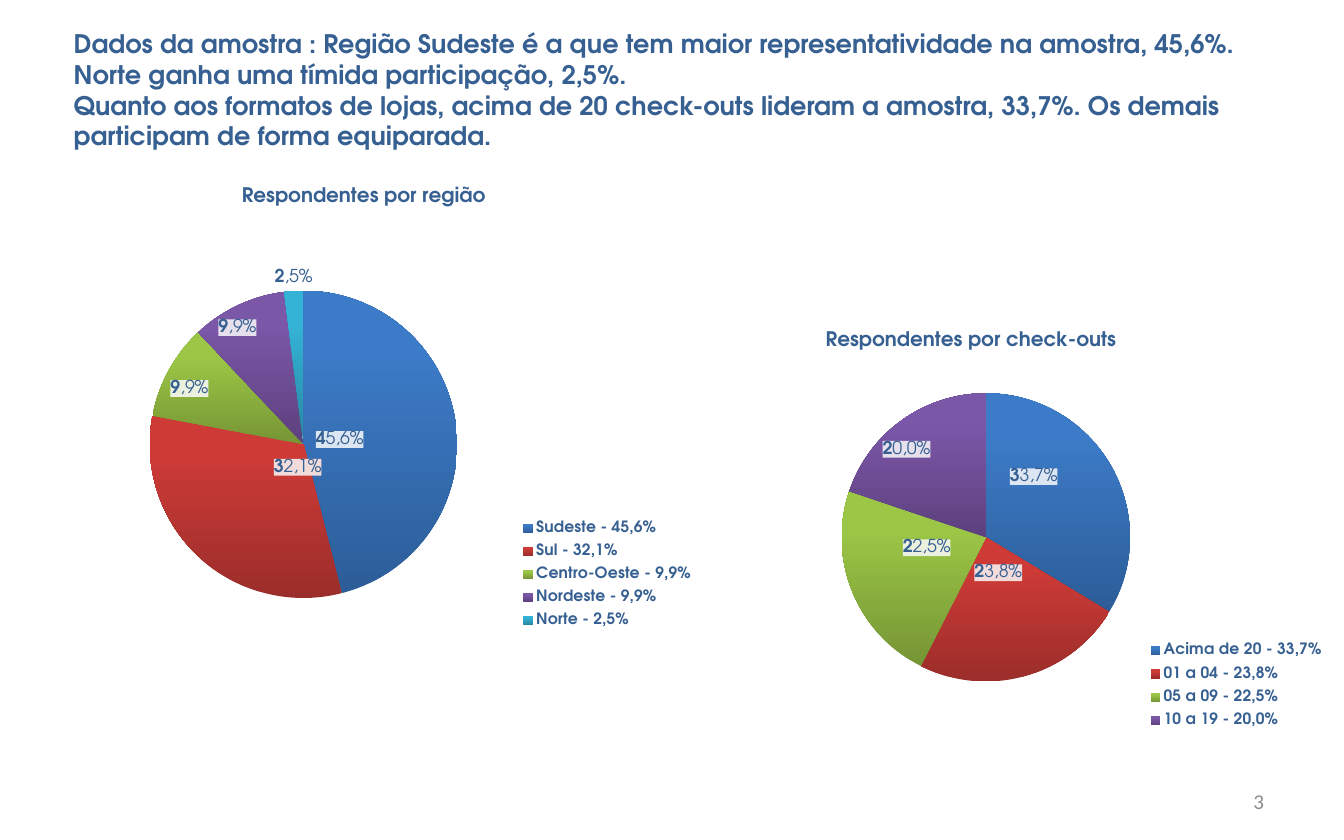
"""Builds the slide that presents the survey sample by region and by check-outs."""
from dataclasses import dataclass

from lxml.etree import SubElement
from pptx import Presentation
from pptx.chart.data import CategoryChartData
from pptx.dml.color import RGBColor
from pptx.enum.chart import XL_CHART_TYPE, XL_LABEL_POSITION, XL_LEGEND_POSITION
from pptx.enum.text import MSO_ANCHOR, PP_ALIGN
from pptx.oxml import parse_xml
from pptx.oxml.ns import nsdecls, qn
from pptx.util import Cm, Pt


@dataclass(frozen=True)
class Theme:
    """Colours, fonts and type sizes of the slide."""
    ink: str = "376092"
    muted: str = "8C8C8C"
    font: str = "TeX Gyre Adventor"
    number_font: str = "Calibri"
    heading_size: int = 23
    number_size: int = 19
    title_size: int = 18
    label_size: int = 16
    legend_size: int = 14
    slices: tuple = (("2C5D98", "3C7BC7"), ("9B2D2A", "CE3B37"), ("769535", "9CC746"),
                     ("5D417E", "7B57A8"), ("2787A0", "34B3D6"))
    label_backs: tuple = ("DCE6F2", "F2DCDB", "EBF1DE", "E6E0EC", "FFFFFF")


def style_font(font, size, color, name, bold=False):
    """Apply size, colour, typeface and weight to a font."""
    font.size, font.name, font.bold = Pt(size), name, bold
    font.color.rgb = RGBColor.from_string(color)


def write_text(frame, text, size, color, name, bold=False, align=PP_ALIGN.LEFT):
    """Write one formatted paragraph into a text frame."""
    para = frame.paragraphs[0]
    para.alignment = align
    para.text = text
    for span in para.runs:
        style_font(span.font, size, color, name, bold)


def manual_layout(**values):
    """Return a chart layout element with the given manual settings."""
    layout = parse_xml(f"<c:layout {nsdecls('c')}><c:manualLayout/></c:layout>")
    for tag, value in values.items():
        SubElement(layout[0], qn(f"c:{tag}")).set("val", str(value))
    return layout


def frame_layout(x, y, w, h, **target):
    """Return a layout that places a chart part by its edges."""
    return manual_layout(**target, xMode="edge", yMode="edge", x=x, y=y, w=w, h=h)


class SlideBuilder:
    """Holds the theme and the current page and draws its elements."""

    def __init__(self, page, theme):
        """Keep the page and the theme."""
        self.page, self.theme = page, theme

    def text(self, text, left, top, width, height, **style):
        """Add a wrapped text box anchored in the middle."""
        box = self.page.shapes.add_textbox(Cm(left), Cm(top), Cm(width), Cm(height))
        frame = box.text_frame
        frame.word_wrap = True
        frame.vertical_anchor = MSO_ANCHOR.MIDDLE
        frame.margin_left = frame.margin_right = Cm(0.41)
        frame.margin_top = frame.margin_bottom = Cm(0.2)
        write_text(frame, text, **style)

    def pie(self, title, rows, place, plot_area, legend_area):
        """Add a pie chart with a title, a legend and placed labels."""
        theme = self.theme
        data = CategoryChartData(number_format="0")
        data.categories = [f"{name} - {share}" for name, _, share, _ in rows]
        data.add_series("Respondentes", [value for _, value, _, _ in rows])
        chart = self.page.shapes.add_chart(
            XL_CHART_TYPE.PIE, *(Cm(length) for length in place), data).chart
        style_font(chart.font, theme.legend_size, theme.ink, theme.font)
        chart.has_title = True
        write_text(chart.chart_title.text_frame, title, theme.title_size, theme.ink,
                   theme.font, bold=True, align=PP_ALIGN.CENTER)
        chart.chart_title.include_in_layout = False
        self.legend(chart, legend_area)
        plot = chart.plots[0]
        plot.vary_by_categories = True
        area = plot._element.getparent()
        for old in area.findall(qn("c:layout")):
            area.remove(old)
        area.insert(0, frame_layout(*plot_area, layoutTarget="inner"))
        for index, (_, _, share, shift) in enumerate(rows):
            point = plot.series[0].points[index]
            self.slice_fill(point, theme.slices[index])
            self.label(point.data_label, share, shift, theme.label_backs[index])

    def legend(self, chart, area):
        """Show the legend in the given part of the chart."""
        chart.has_legend = True
        legend = chart.legend
        legend.position = XL_LEGEND_POSITION.RIGHT
        legend.include_in_layout = False
        style_font(legend.font, self.theme.legend_size, self.theme.ink,
                   self.theme.font, bold=True)
        element = legend._element
        for old in element.findall(qn("c:layout")):
            element.remove(old)
        element.find(qn("c:legendPos")).addnext(frame_layout(*area))

    def slice_fill(self, point, shades):
        """Fill a slice from its dark shade below to its light shade above."""
        fill = point.format.fill
        fill.gradient()
        fill.gradient_angle = 90
        for stop, shade, position in zip(fill.gradient_stops, shades, (0, 0.8)):
            stop.color.rgb = RGBColor.from_string(shade)
            stop.position = position

    def label(self, label, share, shift, back):
        """Write a share with a bold first digit, shifted from the slice centre."""
        theme = self.theme
        frame = label.text_frame
        para = frame.paragraphs[0]
        for part, bold in ((share[0], True), (share[1:], False)):
            span = para.add_run()
            span.text = part
            style_font(span.font, theme.label_size, theme.ink, theme.font, bold)
        label.position = XL_LABEL_POSITION.CENTER if shift else XL_LABEL_POSITION.OUTSIDE_END
        holder = frame._txBody.getparent()
        holder.addnext(parse_xml(
            f"<c:spPr {nsdecls('c', 'a')}><a:solidFill><a:srgbClr val='{back}'/>"
            "</a:solidFill></c:spPr>"))
        if shift:
            holder.addprevious(manual_layout(x=shift[0], y=shift[1]))


def main():
    """Build the deck and save it."""
    deck = Presentation()
    deck.slide_width, deck.slide_height = Cm(42.67), Cm(26.67)
    theme = Theme()
    builder = SlideBuilder(deck.slides.add_slide(deck.slide_layouts[6]), theme)
    regions = [("Sudeste", 46, "45,6%", (-0.06, 0.01)),
               ("Sul", 32, "32,1%", (0.07, -0.07)),
               ("Centro-Oeste", 10, "9,9%", (-0.07, -0.04)),
               ("Nordeste", 10, "9,9%", (-0.05, -0.1)),
               ("Norte", 2, "2,5%", None)]
    checkouts = [("Acima de 20", 34, "33,7%", (-0.02, -0.06)),
                 ("01 a 04", 24, "23,8%", (-0.01, -0.08)),
                 ("05 a 09", 23, "22,5%", (0.01, -0.04)),
                 ("10 a 19", 20, "20,0%", (-0.05, -0.07))]
    builder.pie("Respondentes por região", regions, place=(0.94, 5.33, 21.21, 15.01),
                plot_area=(0, 0.26, 0.82, 0.65), legend_area=(0.73, 0.73, 0.27, 0.26))
    builder.pie("Respondentes por check-outs", checkouts, place=(18.95, 9.93, 23.75, 13.46),
                plot_area=(0.1, 0.19, 0.84, 0.68), legend_area=(0.72, 0.76, 0.27, 0.24))
    builder.text(
        "Dados da amostra : Região Sudeste é a que tem maior representatividade na amostra, "
        "45,6%. Norte ganha uma tímida participação, 2,5%.\v"
        "Quanto aos formatos de lojas, acima de 20 check-outs lideram a amostra, 33,7%. "
        "Os demais participam de forma equiparada.",
        1.93, 0.94, 38.4, 3.81, size=theme.heading_size, color=theme.ink,
        name=theme.font, bold=True)
    builder.text("3", 30.58, 24.71, 9.96, 1.42, size=theme.number_size, color=theme.muted,
                 name=theme.number_font, align=PP_ALIGN.RIGHT)
    deck.save("out.pptx")


if __name__ == "__main__":
    main()
